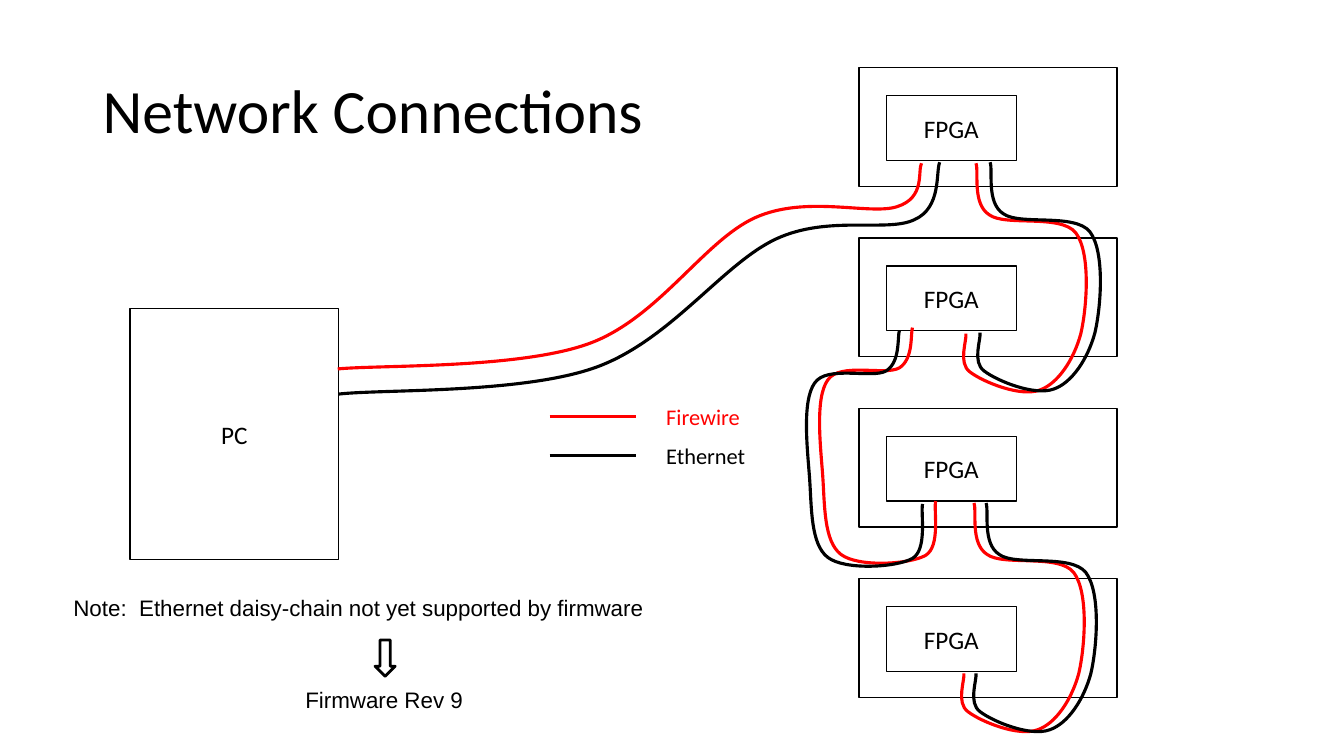
"""Network Connections: a PC cabled to a daisy-chain of four FPGA boards."""
from lxml import etree
from pptx import Presentation
from pptx.dml.color import RGBColor
from pptx.enum.shapes import MSO_CONNECTOR, MSO_SHAPE
from pptx.enum.text import MSO_ANCHOR, MSO_AUTO_SIZE, PP_ALIGN
from pptx.oxml.ns import qn
from pptx.util import Inches, Pt

RECTANGLE, DOWN_ARROW = MSO_SHAPE.RECTANGLE, MSO_SHAPE.DOWN_ARROW
STRAIGHT = MSO_CONNECTOR.STRAIGHT
MIDDLE, TOP = MSO_ANCHOR.MIDDLE, MSO_ANCHOR.TOP
CENTER, LEFT = PP_ALIGN.CENTER, PP_ALIGN.LEFT
GROW, FIXED = MSO_AUTO_SIZE.SHAPE_TO_FIT_TEXT, MSO_AUTO_SIZE.NONE

THEME = {
    "ink": RGBColor(0, 0, 0),
    "paper": RGBColor(255, 255, 255),
    "firewire": RGBColor(255, 0, 0),
    "body_font": "Calibri",
    "note_font": "Arial",
    "title_size": Pt(44),
    "box_size": Pt(18),
    "small_size": Pt(16),
    "outline": Pt(1),
    "key_line": Pt(2),
    "cable": Pt(2.25),
}
INK, RED = THEME["ink"], THEME["firewire"]
CELL = Inches(1)

deck = Presentation()
deck.slide_width, deck.slide_height = Inches(13.33), Inches(7.5)
slide = deck.slides.add_slide(deck.slide_layouts[6])
shapes = slide.shapes


def write(holder, wording, size, frame_format, font=THEME["body_font"], color=INK, align=LEFT):
    """Put one formatted paragraph into a box."""
    frame = holder.text_frame
    frame.text = wording
    for attribute, value in frame_format.items():
        setattr(frame, attribute, value)
    paragraph = frame.paragraphs[0]
    paragraph.alignment = align
    for attribute, value in {"name": font, "size": size}.items():
        setattr(paragraph.font, attribute, value)
    paragraph.font.color.rgb = color
    return paragraph


def add_box(kind, column, row, columns, rows, width=THEME["outline"]):
    """Draw a white outlined shape at a grid position."""
    box = shapes.add_shape(kind, *(round(n * CELL) for n in (column, row, columns, rows)))
    box.shadow.inherit = False
    box.fill.solid()
    box.fill.fore_color.rgb = THEME["paper"]
    box.line.color.rgb = INK
    box.line.width = width
    return box


title = shapes.add_textbox(*(round(n * CELL) for n in (0.92, 0.4, 11.5, 1.45)))
heading = write(title, "Network Connections", THEME["title_size"],
                {"vertical_anchor": MIDDLE, "word_wrap": True, "auto_size": FIXED})
heading.line_spacing = 0.9

LABEL_FORMAT = {"vertical_anchor": MIDDLE, "word_wrap": True}
BOARD_LEFT, BOARD_TOP, BOARD_PITCH = 8.52, 0.67, 1.69
for board in range(4):
    board_top = BOARD_TOP + board * BOARD_PITCH
    add_box(RECTANGLE, BOARD_LEFT, board_top, 2.56, 1.18)
    fpga = add_box(RECTANGLE, BOARD_LEFT + 0.27, board_top + 0.28, 1.29, 0.64)
    write(fpga, "FPGA", THEME["box_size"], LABEL_FORMAT, align=CENTER)

pc = add_box(RECTANGLE, 1.29, 3.06, 2.07, 2.49)
write(pc, "PC", THEME["box_size"], LABEL_FORMAT, align=CENTER)

RIGHT_LOOP = [
    (9.68, 1.62), (9.71, 1.7), (9.64, 2.02), (9.81, 2.13),
    (9.97, 2.25), (10.52, 2.12), (10.67, 2.31),
    (10.82, 2.51), (10.78, 3.05), (10.72, 3.31),
    (10.65, 3.57), (10.49, 3.81), (10.31, 3.87),
    (10.12, 3.94), (9.75, 3.79), (9.62, 3.69),
    (9.5, 3.6), (9.59, 3.38), (9.58, 3.31),
]
LEFT_LOOP = [
    (9.05, 3.25), (9.03, 3.32), (9.06, 3.56), (8.92, 3.65),
    (8.78, 3.73), (8.33, 3.59), (8.21, 3.77),
    (8.08, 3.95), (8.14, 4.44), (8.16, 4.72),
    (8.18, 5.01), (8.17, 5.37), (8.34, 5.5),
    (8.51, 5.63), (9.02, 5.6), (9.18, 5.51),
    (9.33, 5.42), (9.26, 5.06), (9.28, 4.97),
]
PC_FIREWIRE = [
    (9.14, 1.62), (9.1, 1.7), (9.18, 1.96), (8.9, 2.05),
    (8.63, 2.14), (8, 1.93), (7.49, 2.16),
    (6.98, 2.39), (6.53, 3.16), (5.84, 3.41),
    (5.15, 3.66), (3.77, 3.62), (3.35, 3.66),
]
PC_ETHERNET = [
    (9.32, 1.61), (9.28, 1.71), (9.34, 2.06), (9.07, 2.18),
    (8.8, 2.31), (8.22, 2.13), (7.7, 2.37),
    (7.18, 2.61), (6.67, 3.35), (5.95, 3.63),
    (5.23, 3.91), (3.79, 3.86), (3.36, 3.91),
]
CABLES = [
    (RIGHT_LOOP, RED, 0, 0),
    (RIGHT_LOOP, RED, -0.02, 3.37),
    (LEFT_LOOP, RED, 0, 0),
    (RIGHT_LOOP, INK, 0.14, -0.01),
    (RIGHT_LOOP, INK, 0.1, 3.37),
    (LEFT_LOOP, INK, -0.13, 0.03),
    (PC_FIREWIRE, RED, 0, 0),
    (PC_ETHERNET, INK, 0, 0),
]
for route, color, shift_x, shift_y in CABLES:
    points = [(round((x + shift_x) * CELL), round((y + shift_y) * CELL)) for x, y in route]
    builder = shapes.build_freeform(*points[0])
    builder.add_line_segments(points[1:], close=False)
    cable = builder.convert_to_shape()
    outline = next(cable.element.iter(qn("a:path")))
    segments = outline.findall(qn("a:lnTo"))
    for first in range(0, len(segments), 3):
        curve = etree.SubElement(outline, qn("a:cubicBezTo"))
        for segment in segments[first:first + 3]:
            curve.append(segment[0])
            outline.remove(segment)
    cable.shadow.inherit = False
    cable.fill.background()
    cable.line.color.rgb = color
    cable.line.width = THEME["cable"]

KEY_FORMAT = {"vertical_anchor": TOP, "word_wrap": False, "auto_size": GROW,
              "margin_top": Inches(0.1), "margin_bottom": Inches(0.1)}
for entry, (network, color) in enumerate([("Firewire", RED), ("Ethernet", INK)]):
    key_row = 4.13 + entry * 0.39
    sample = shapes.add_connector(
        STRAIGHT, *(round(n * CELL) for n in (5.45, key_row, 6.31, key_row)))
    sample.line.color.rgb = color
    sample.line.width = THEME["key_line"]
    etree.SubElement(sample.element.spPr, qn("a:effectLst"))
    key = shapes.add_textbox(*(round(n * CELL) for n in (6.51, key_row - 0.23, 1.03, 0.47)))
    write(key, network, THEME["small_size"], KEY_FORMAT, color=color)

NOTES = [
    ("Note:  Ethernet daisy-chain not yet supported by firmware", 0.63, 5.85, 6.4),
    ("Firmware Rev 9", 2.93, 6.76, 1.96),
]
for wording, column, row, columns in NOTES:
    note = shapes.add_textbox(*(round(n * CELL) for n in (column, row, columns, 0.37)))
    write(note, wording, THEME["small_size"], {"word_wrap": True, "auto_size": GROW},
          font=THEME["note_font"])

add_box(DOWN_ARROW, 3.72, 6.35, 0.2, 0.36, THEME["key_line"])

deck.save("out.pptx")
